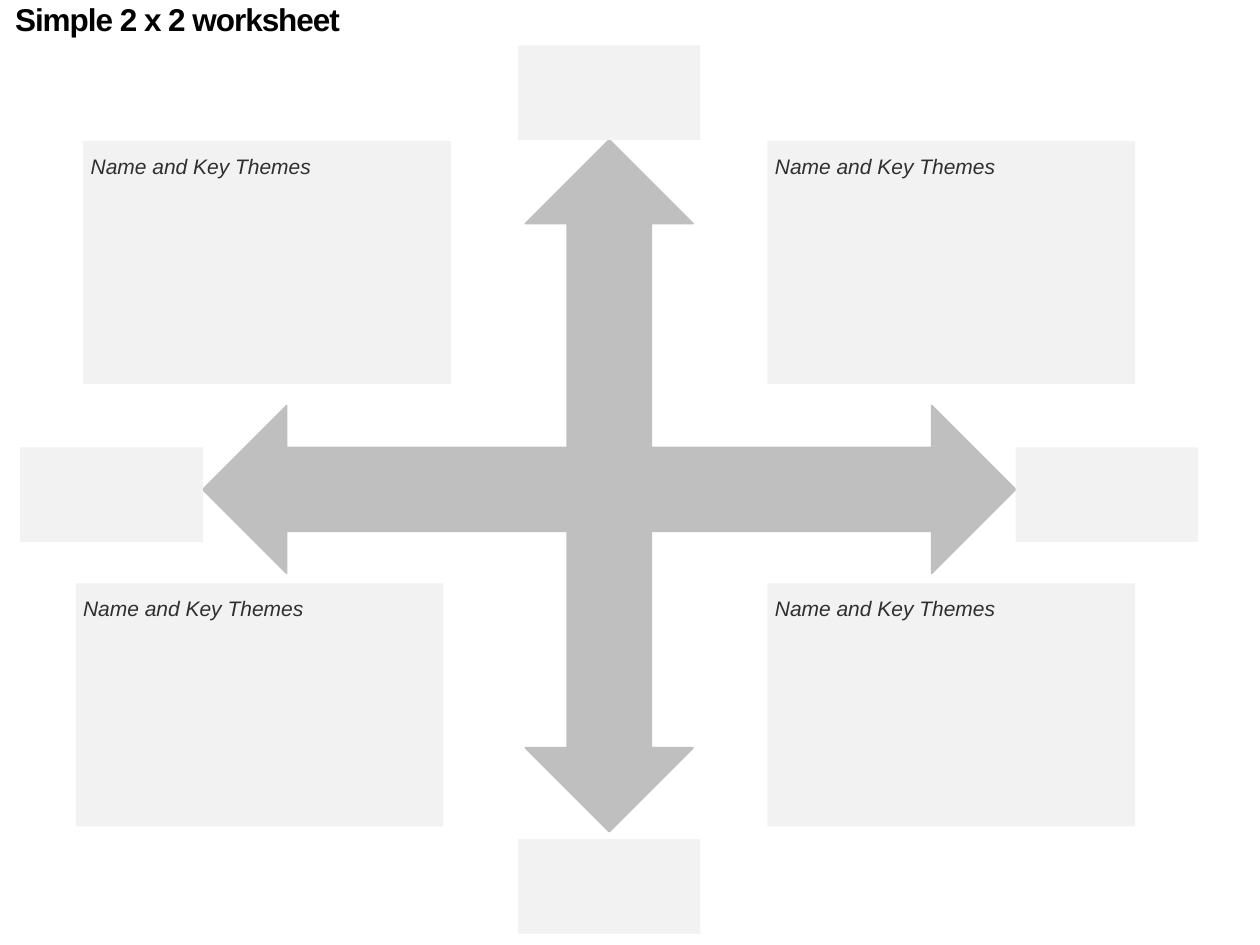
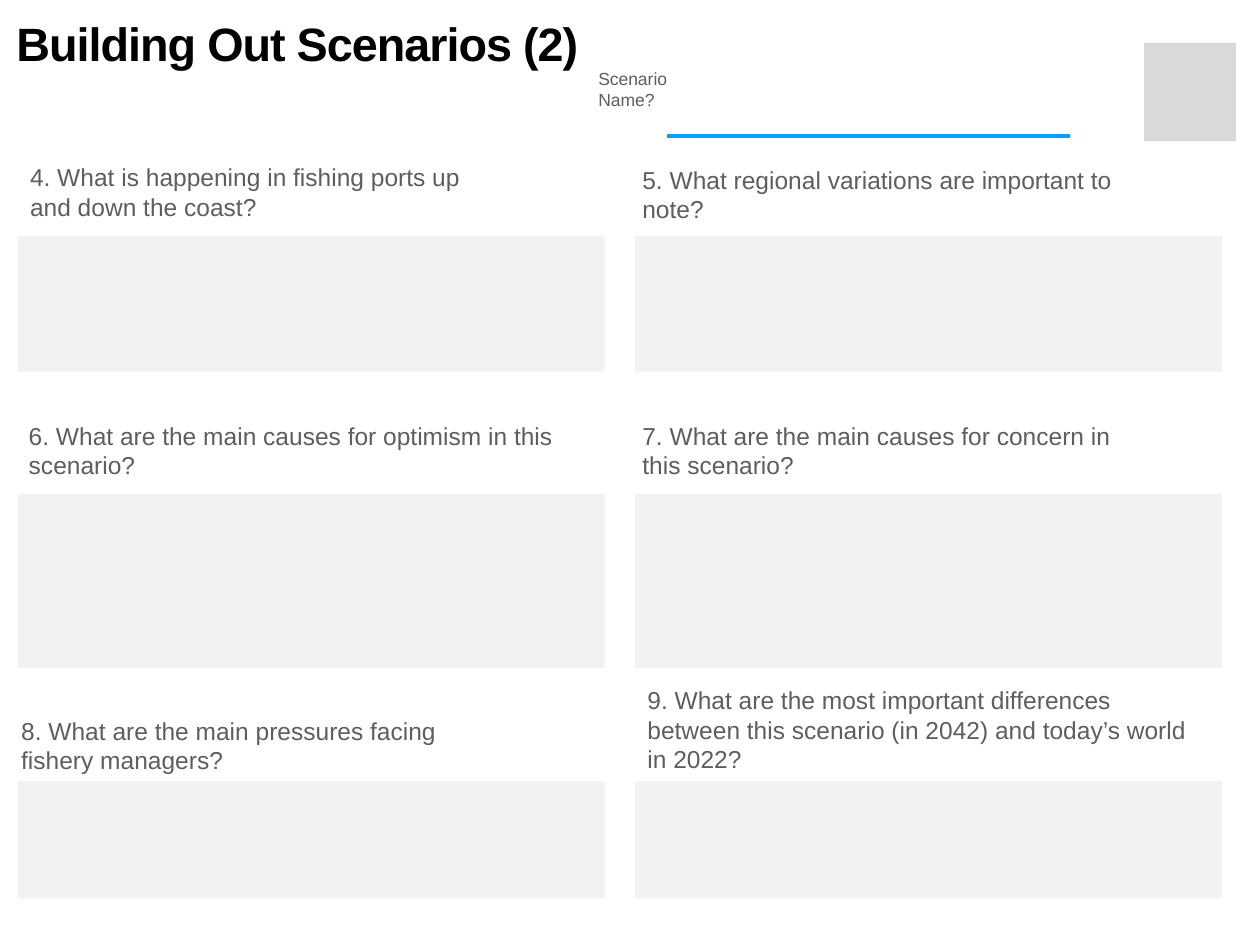
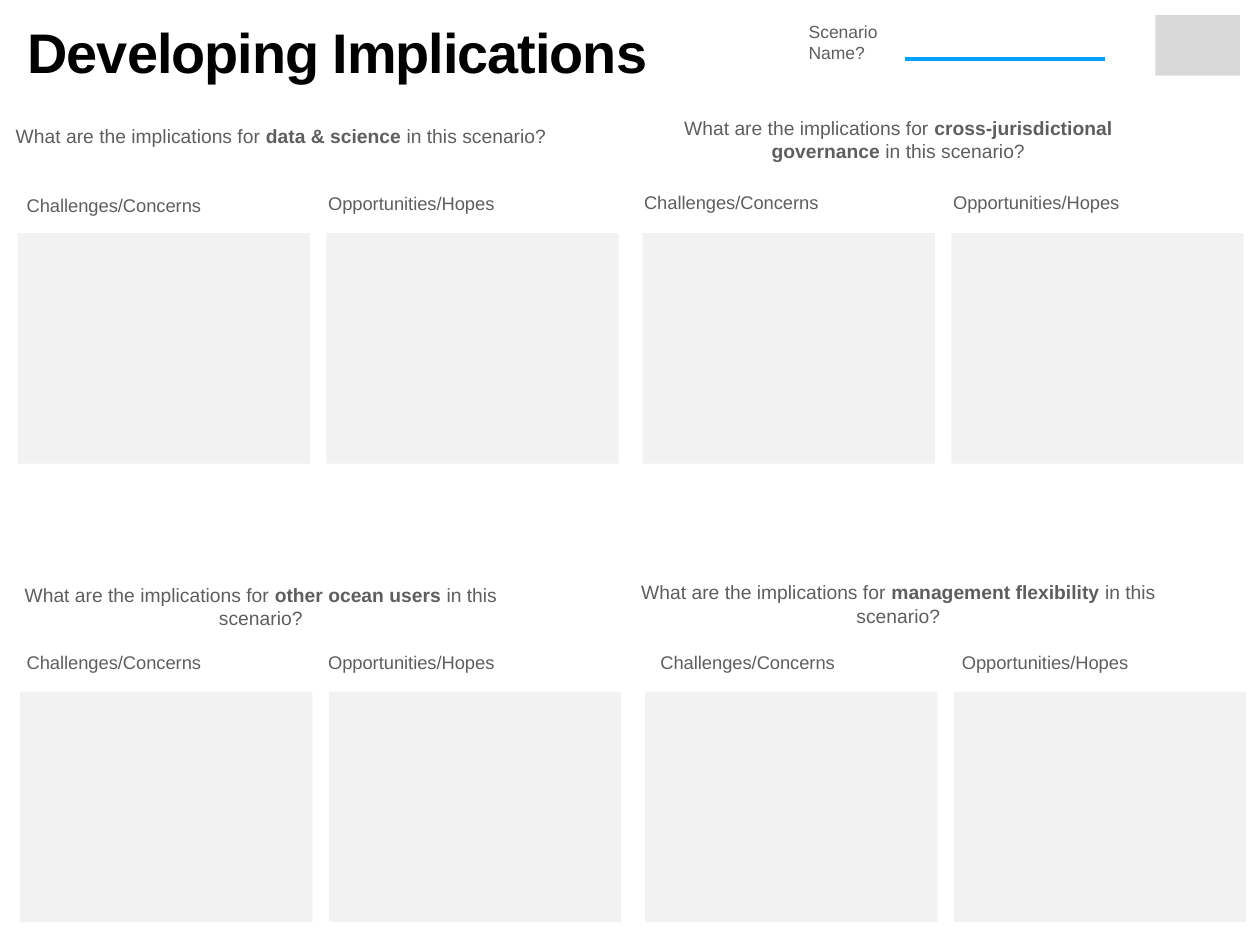
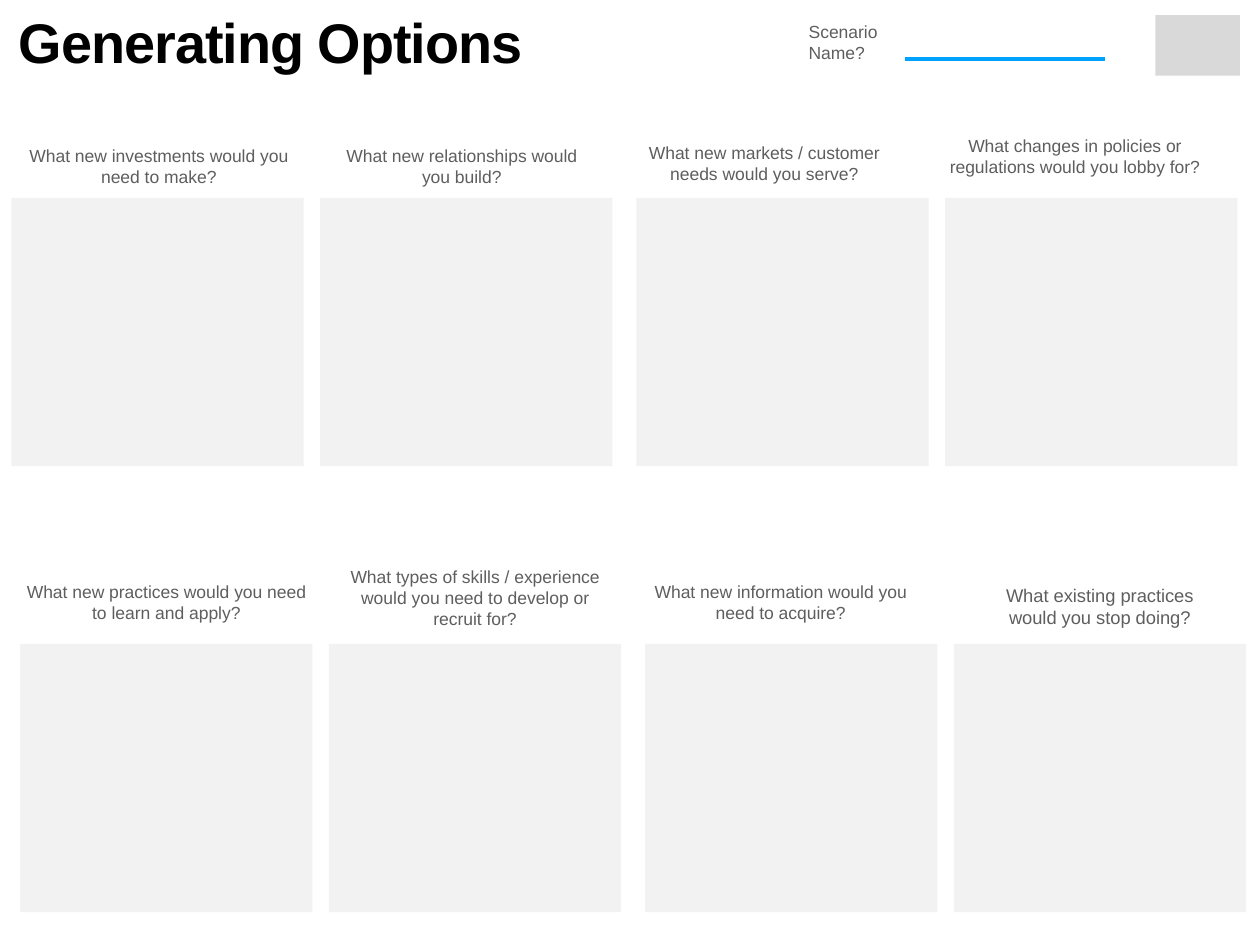
"""Build four scenario-planning worksheets."""
from lxml import etree
from pptx import Presentation
from pptx.dml.color import RGBColor
from pptx.enum.shapes import MSO_CONNECTOR, MSO_SHAPE
from pptx.enum.text import MSO_ANCHOR, MSO_AUTO_SIZE, PP_ALIGN
from pptx.oxml.ns import qn
from pptx.util import Inches, Pt

RECTANGLE = MSO_SHAPE.RECTANGLE
DOUBLE_ARROW = MSO_SHAPE.LEFT_RIGHT_ARROW
STRAIGHT = MSO_CONNECTOR.STRAIGHT
TOP, MIDDLE = MSO_ANCHOR.TOP, MSO_ANCHOR.MIDDLE
LEFT, CENTER = PP_ALIGN.LEFT, PP_ALIGN.CENTER
NO_AUTOFIT = MSO_AUTO_SIZE.NONE

BLACK = RGBColor(0x00, 0x00, 0x00)
DARK = RGBColor(0x2F, 0x2F, 0x2F)
GRAY_TEXT = RGBColor(0x5E, 0x5E, 0x5E)
PANEL = RGBColor(0xF2, 0xF2, 0xF2)
BADGE = RGBColor(0xD9, 0xD9, 0xD9)
ARROW = RGBColor(0xBF, 0xBF, 0xBF)
BLUE = RGBColor(0x00, 0xA2, 0xFF)
FONT = "Arial"
SMALL_INSETS = (0.06, 0.06)
BOX_INSETS = (0.1, 0.05)

AXES = [((1.61, 3.22, 6.45, 1.33), 0), ((2.09, 3.19, 5.49, 1.33), 90)]
AXIS_ENDS = [(0.16, 3.55), (8.06, 3.55), (4.11, 0.36), (4.11, 6.66)]
AXIS_END_SIZE = (1.45, 0.75)
THEME_PROMPT = "Name and Key Themes"
QUADRANTS = [(0.66, 1.12), (6.09, 1.12), (6.09, 4.63), (0.6, 4.63)]
QUADRANT_SIZE = (2.92, 1.93)

ANSWER_COLUMNS = (0.14, 5.04)
ANSWER_WIDTH = 4.66
ANSWER_ROWS = [(1.87, 1.08), (3.92, 1.38), (6.2, 0.93)]
SCENARIO_QUESTIONS = [
    ("4. What is happening in fishing ports up and down the coast?", (0.14, 1.24, 3.93, 0.57)),
    ("5. What regional variations are important to note?", (5, 1.26, 3.93, 0.57)),
    ("6. What are the main causes for optimism in this scenario?", (0.13, 3.29, 4.76, 0.57)),
    ("7. What are the main causes for concern in this scenario?", (5, 3.29, 3.93, 0.57)),
    ("8. What are the main pressures facing fishery managers?", (0.07, 5.63, 3.83, 0.57)),
    ("9. What are the most important differences between this scenario (in 2042) "
     "and today’s world in 2022?", (5.04, 5.39, 4.57, 0.81)),
]

PANEL_OFFSETS = (0, 2.45, 4.96, 7.41)
PANEL_WIDTH = 2.32
IMPLICATIONS = [
    ("data & science", (0, 0.94, 4.46, 0.29)),
    ("cross-jurisdictional governance", (4.9, 0.87, 4.46, 0.47)),
    ("other ocean users", (-0.16, 4.58, 4.46, 0.47)),
    ("management flexibility", (4.9, 4.56, 4.46, 0.47)),
]
CHALLENGES = ("Challenges/Concerns", 1.53)
OPPORTUNITIES = ("Opportunities/Hopes", 1.49)
COLUMN_LABELS = [
    (CHALLENGES, [(0.14, 1.48), (5.04, 1.46), (0.14, 5.11), (5.17, 5.11)]),
    (OPPORTUNITIES, [(2.52, 1.47), (7.48, 1.46), (2.52, 5.11), (7.55, 5.11)]),
]
IMPLICATION_ROWS = [(0.14, 1.85), (0.16, 5.49)]

OPTION_QUESTIONS = [
    ("What new investments would you need to make?", (0, 1.1, 2.52, 0.44), 10),
    ("What new relationships would you build?", (2.6, 1.1, 2.13, 0.44), 10),
    ("What new markets / customer needs would you serve?", (5, 1.08, 2.13, 0.44), 10),
    ("What changes in policies or regulations would you lobby for?", (7.37, 1.02, 2.32, 0.44), 10),
    ("What new practices would you need to learn and apply?", (0.06, 4.56, 2.52, 0.44), 10),
    ("What types of skills / experience would you need to develop or recruit for?",
     (2.61, 4.44, 2.32, 0.61), 10),
    ("What new information would you need to acquire?", (5.02, 4.56, 2.35, 0.44), 10),
    ("What existing practices would you stop doing?", (7.7, 4.59, 2.06, 0.44), 10.5),
]
OPTION_ROWS = [(0.09, 1.57), (0.16, 5.11)]

WIDE_HEADER = ((4.65, 0.49), (5.29, 8.49, 1.08), (9.08, 0.34, 0.73, 0.78))
COMPACT_HEADER = ((6.32, 0.12), (7.18, 8.77, 0.47), (9.17, 0.12, 0.67, 0.48))


def inches(values):
    return [Inches(value) for value in values]


def style_frame(frame, insets, anchor=TOP, wrap=True):
    frame.word_wrap = wrap
    frame.vertical_anchor = anchor
    frame.margin_left = frame.margin_right = Inches(insets[0])
    frame.margin_top = frame.margin_bottom = Inches(insets[1])


def style_font(font, size, color):
    font.name = FONT
    font.size = Pt(size)
    font.color.rgb = color


def add_worksheet(deck, title, place, size):
    slide = deck.slides.add_slide(deck.slide_layouts[5])
    heading = slide.shapes.title
    heading.left, heading.top, heading.width, heading.height = inches(place)
    frame = heading.text_frame
    style_frame(frame, SMALL_INSETS)
    frame.auto_size = NO_AUTOFIT
    paragraph = frame.paragraphs[0]
    paragraph.alignment = LEFT
    paragraph.line_spacing = 0.8
    style_font(paragraph.font, size, BLACK)
    paragraph.font.bold = True
    run = paragraph.add_run()
    run.text = title
    run._r.get_or_add_rPr().set("spc", "-60")
    return slide


def add_block(slide, place, color=PANEL, kind=RECTANGLE):
    block = slide.shapes.add_shape(kind, *inches(place))
    block.shadow.inherit = False
    block.fill.solid()
    block.fill.fore_color.rgb = color
    block.line.fill.background()
    return block


def add_text(slide, parts, place, size, align=CENTER, insets=BOX_INSETS, anchor=TOP, wrap=True):
    """Add a text box whose odd-numbered parts are bold."""
    frame = slide.shapes.add_textbox(*inches(place)).text_frame
    style_frame(frame, insets, anchor, wrap)
    paragraph = frame.paragraphs[0]
    paragraph.alignment = align
    style_font(paragraph.font, size, GRAY_TEXT)
    for index, part in enumerate(parts):
        run = paragraph.add_run()
        run.text = part
        if index % 2:
            run.font.bold = True


def add_scenario_header(slide, header):
    label, (start, end, y), badge = header
    add_text(slide, ["Scenario Name?"], (*label, 0.87, 0.44), 10, LEFT)
    rule = slide.shapes.add_connector(STRAIGHT, *inches((start, y, end, y)))
    rule.line.color.rgb = BLUE
    rule.line.width = Pt(2)
    etree.SubElement(rule._element.spPr, qn("a:effectLst"))
    add_block(slide, badge, BADGE)


def add_panel_rows(slide, rows, height):
    for left, top in rows:
        for offset in PANEL_OFFSETS:
            add_block(slide, (left + offset, top, PANEL_WIDTH, height))


def build_matrix(deck):
    slide = add_worksheet(deck, "Simple 2 x 2 worksheet", (0.06, 0, 9.01, 0.78), 18)
    for place, angle in AXES:
        axis = add_block(slide, place, ARROW, DOUBLE_ARROW)
        axis.rotation = angle
        axis.line.color.rgb = ARROW
        axis.line.width = Pt(1)
    for corner in AXIS_ENDS:
        add_block(slide, corner + AXIS_END_SIZE)
    for corner in QUADRANTS:
        frame = add_block(slide, corner + QUADRANT_SIZE).text_frame
        style_frame(frame, (0.06, 0.1))
        paragraph = frame.paragraphs[0]
        paragraph.text = THEME_PROMPT
        paragraph.alignment = LEFT
        style_font(paragraph.font, 12, DARK)
        paragraph.font.italic = True


def build_scenarios(deck):
    slide = add_worksheet(deck, "Building Out Scenarios (2)", (0.07, 0.14, 9.01, 0.59), 26.7)
    add_scenario_header(slide, WIDE_HEADER)
    for top, height in ANSWER_ROWS:
        for left in ANSWER_COLUMNS:
            add_block(slide, (left, top, ANSWER_WIDTH, height))
    for question, place in SCENARIO_QUESTIONS:
        add_text(slide, [question], place, 14, LEFT)


def build_implications(deck):
    slide = add_worksheet(deck, "Developing Implications", (0.16, 0.18, 9.01, 0.78), 31.9)
    add_scenario_header(slide, COMPACT_HEADER)
    add_panel_rows(slide, IMPLICATION_ROWS, 1.83)
    for topic, place in IMPLICATIONS:
        parts = ["What are the implications for ", f"{topic} ", "in this scenario?"]
        add_text(slide, parts, place, 11)
    for (label, width), corners in COLUMN_LABELS:
        for corner in corners:
            add_text(slide, [label], (*corner, width, 0.29), 10.5,
                     insets=SMALL_INSETS, anchor=MIDDLE, wrap=False)


def build_options(deck):
    slide = add_worksheet(deck, "Generating Options", (0.09, 0.1, 9.01, 0.78), 31.9)
    add_scenario_header(slide, COMPACT_HEADER)
    add_panel_rows(slide, OPTION_ROWS, 2.13)
    for question, place, size in OPTION_QUESTIONS:
        add_text(slide, [question], place, size)


def main():
    deck = Presentation()
    deck.slide_width, deck.slide_height = Inches(10), Inches(7.5)
    for build in (build_matrix, build_scenarios, build_implications, build_options):
        build(deck)
    deck.save("out.pptx")


if __name__ == "__main__":
    main()
